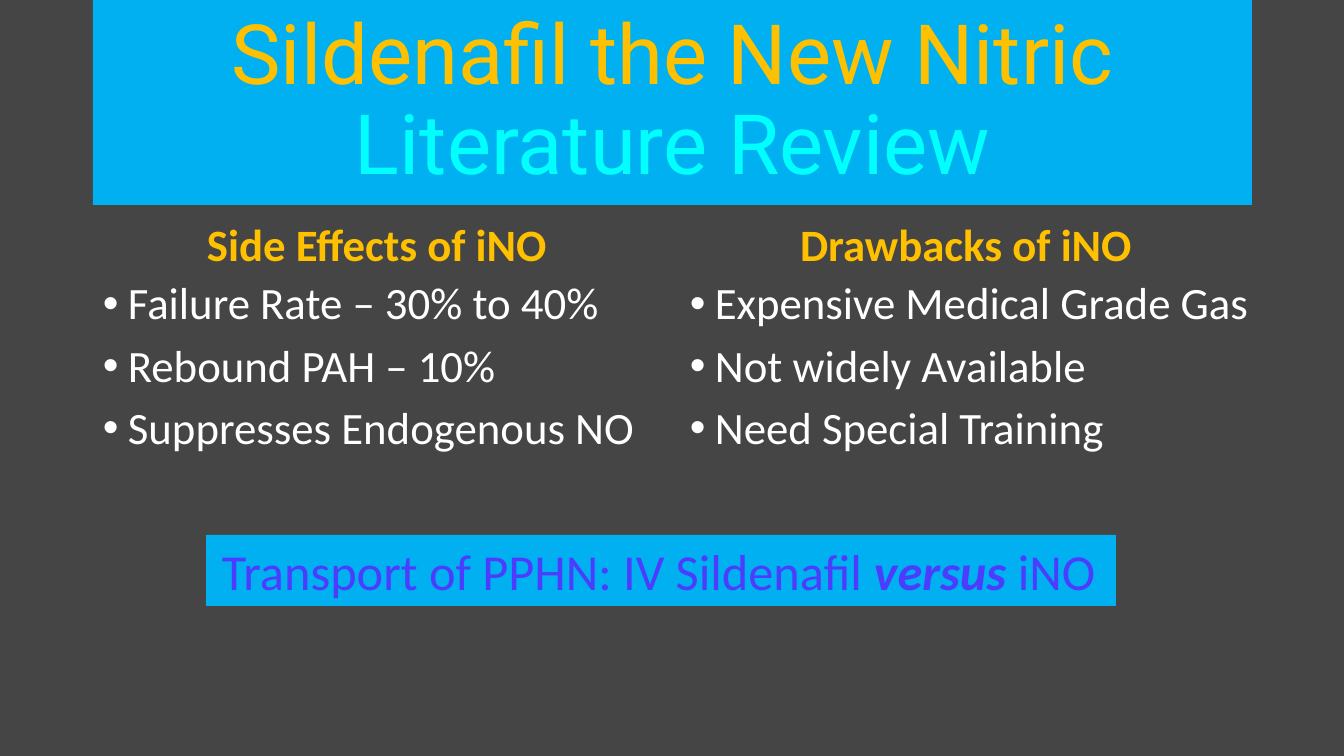
"""Build the slide on sildenafil and the side effects and drawbacks of iNO."""
from typing import NamedTuple

from lxml import etree
from pptx import Presentation
from pptx.dml.color import RGBColor
from pptx.enum.shapes import MSO_SHAPE
from pptx.enum.text import MSO_ANCHOR, PP_ALIGN
from pptx.oxml.ns import qn
from pptx.util import Emu, Pt

RECTANGLE = MSO_SHAPE.RECTANGLE
TOP, MIDDLE, BOTTOM = MSO_ANCHOR.TOP, MSO_ANCHOR.MIDDLE, MSO_ANCHOR.BOTTOM
LEFT, CENTER = PP_ALIGN.LEFT, PP_ALIGN.CENTER
EMU_PER_PX = 914400 / 100.8
BACKGROUND, PANEL = "454545", "00B0F0"
GOLD, CYAN, WHITE, VIOLET = "FFC000", "00FFFE", "FFFFFF", "4C3DFE"
BODY_FONT, TITLE_FONT = "Calibri", "Roboto"
BULLET_INDENT = 25
HEADING_TOP, HEADING_HEIGHT = 185, 91
LIST_TOP, LIST_HEIGHT = 276, 236


class Column(NamedTuple):
    left: int
    heading_width: int
    list_width: int
    heading: str
    items: tuple[str, ...]


COLUMNS = (
    Column(93, 568, 568, "Side Effects of iNO",
           ("Failure Rate – 30% to 40%", "Rebound PAH – 10%", "Suppresses Endogenous NO")),
    Column(680, 572, 591, "Drawbacks of iNO",
           ("Expensive Medical Grade Gas", "Not widely Available", "Need Special Training")),
)


def px(length: int) -> Emu:
    """Turn px into EMU."""
    return Emu(round(length * EMU_PER_PX))


def color(value: str) -> RGBColor:
    """Turn a hex string into a colour."""
    return RGBColor.from_string(value)


def add_box(slide, left: int, top: int, width: int, height: int,
            anchor=TOP, fill: str | None = None):
    """Add a text box, or a filled rectangle, and return its text frame."""
    bounds = px(left), px(top), px(width), px(height)
    if fill:
        shape = slide.shapes.add_shape(RECTANGLE, *bounds)
        shape.shadow.inherit = False
        shape.fill.solid()
        shape.fill.fore_color.rgb = color(fill)
        shape.line.fill.background()
    else:
        shape = slide.shapes.add_textbox(*bounds)
    frame = shape.text_frame
    frame.word_wrap = True
    frame.vertical_anchor = anchor
    return frame


def add_run(paragraph, text: str, *, size: float, fill: str, font: str = BODY_FONT,
            bold: bool = False, italic: bool = False) -> None:
    """Add formatted text to a paragraph."""
    run = paragraph.add_run()
    run.text = text
    run.font.name = font
    run.font.size = Pt(size)
    run.font.bold = bold
    run.font.italic = italic
    run.font.color.rgb = color(fill)


def add_bullet(paragraph) -> None:
    """Give a paragraph a hanging bullet."""
    properties = paragraph._p.get_or_add_pPr()
    properties.set("marL", str(px(BULLET_INDENT)))
    properties.set("indent", str(-px(BULLET_INDENT)))
    etree.SubElement(properties, qn("a:buFont"), typeface="Arial")
    etree.SubElement(properties, qn("a:buChar"), char="•")


def add_column(slide, column: Column) -> None:
    """Add a heading and the bulleted list under it."""
    heading = add_box(slide, column.left, HEADING_TOP, column.heading_width,
                      HEADING_HEIGHT, BOTTOM).paragraphs[0]
    heading.alignment = CENTER
    heading.line_spacing = 0.9
    add_run(heading, column.heading, size=32, fill=GOLD, bold=True)

    frame = add_box(slide, column.left, LIST_TOP, column.list_width, LIST_HEIGHT)
    for index, item in enumerate(column.items):
        paragraph = frame.add_paragraph() if index else frame.paragraphs[0]
        add_bullet(paragraph)
        paragraph.line_spacing = 0.9
        if index:
            paragraph.space_before = Pt(10)
        add_run(paragraph, item, size=32, fill=WHITE)


def add_title(slide) -> None:
    """Add the two-line title panel."""
    paragraph = add_box(slide, 93, 0, 1159, 205, MIDDLE, PANEL).paragraphs[0]
    paragraph.alignment = CENTER
    paragraph.line_spacing = 0.9
    add_run(paragraph, "Sildenafil the New Nitric", size=59.4, fill=GOLD, font=TITLE_FONT)
    paragraph.add_line_break()
    add_run(paragraph, "Literature Review", size=59.4, fill=CYAN, font=TITLE_FONT)


def add_transport_banner(slide) -> None:
    """Add the banner that compares the two transport treatments."""
    frame = add_box(slide, 206, 535, 910, 71, fill=PANEL)
    frame.margin_left = px(16)
    paragraph = frame.paragraphs[0]
    paragraph.alignment = LEFT
    add_run(paragraph, "Transport of PPHN: IV Sildenafil ", size=36, fill=VIOLET)
    add_run(paragraph, "versus", size=36, fill=VIOLET, bold=True, italic=True)
    add_run(paragraph, " iNO", size=36, fill=VIOLET)


def main() -> None:
    """Build and save the presentation."""
    presentation = Presentation()
    presentation.slide_width = px(1344)
    presentation.slide_height = px(756)
    slide = presentation.slides.add_slide(presentation.slide_layouts[6])
    slide.background.fill.solid()
    slide.background.fill.fore_color.rgb = color(BACKGROUND)
    for column in COLUMNS:
        add_column(slide, column)
    add_title(slide)
    add_transport_banner(slide)
    presentation.save("out.pptx")


if __name__ == "__main__":
    main()
